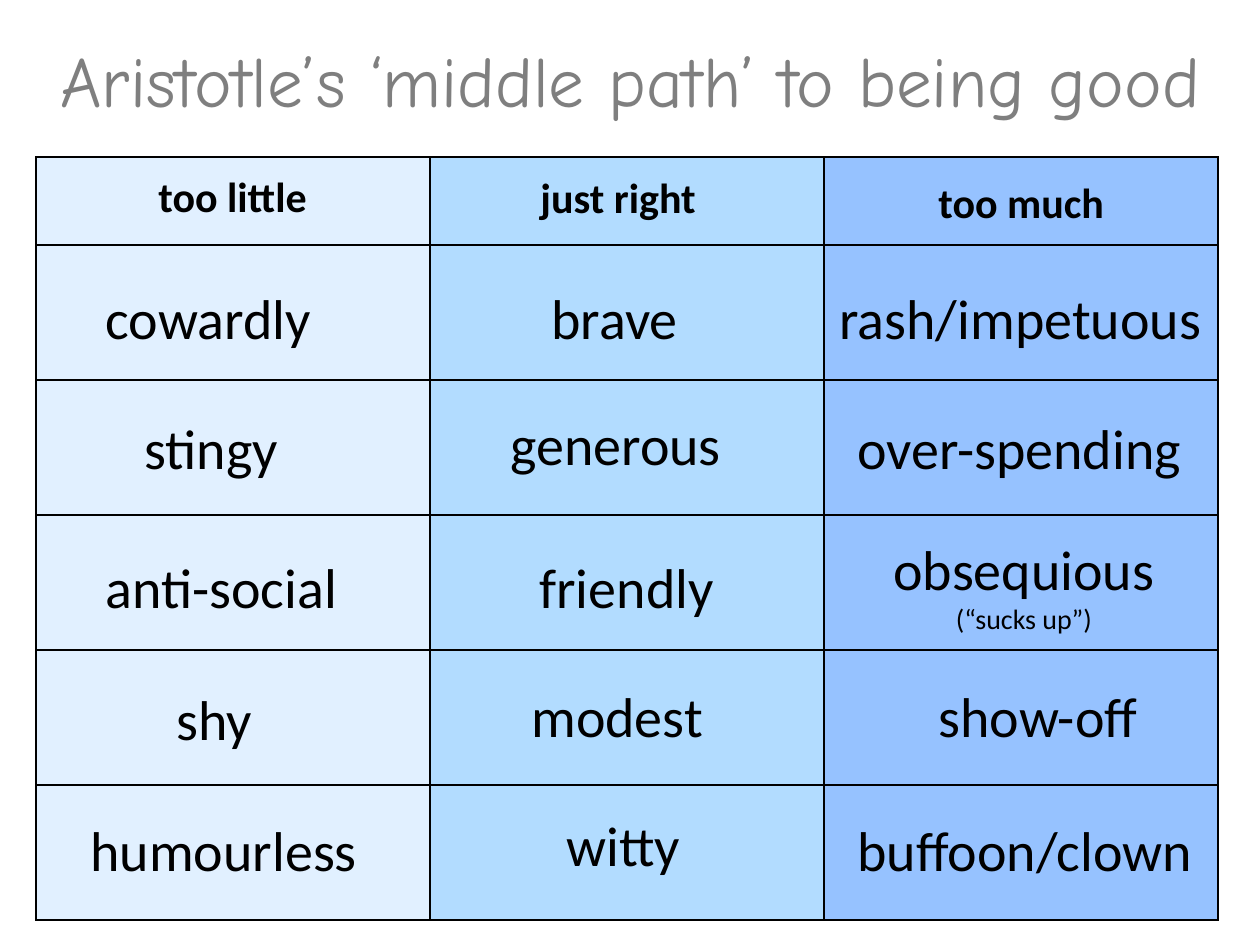
from lxml.etree import SubElement
from pptx import Presentation
from pptx.dml.color import RGBColor
from pptx.enum.text import MSO_ANCHOR, MSO_AUTO_SIZE, PP_ALIGN
from pptx.oxml.ns import qn
from pptx.util import Emu, Pt


def px(length):
    return Emu(round(length * 914400 / 126))


def style(paragraph, size, color="000000", name="Calibri", bold=False):
    font = paragraph.font
    font.size, font.name, font.bold = Pt(size), name, bold
    font.color.rgb = RGBColor.from_string(color)


deck = Presentation()
deck.slide_width, deck.slide_height = px(1260), px(945)
page = deck.slides.add_slide(deck.slide_layouts[6])

# Coloured grid: one header row and five rows of virtues
column_fills = ["E1F0FF", "B2DCFF", "96C2FF"]
row_heights = [88] + [135] * 5
grid = page.shapes.add_table(
    len(row_heights), len(column_fills), px(36), px(157), px(1182), px(sum(row_heights))
).table
for column in grid.columns:
    column.width = px(394)
for row, height in zip(grid.rows, row_heights):
    row.height = px(height)
    for cell, fill in zip(row.cells, column_fills):
        properties = cell._tc.get_or_add_tcPr()
        for side in ("a:lnL", "a:lnR", "a:lnT", "a:lnB"):
            border = SubElement(properties, qn(side), w=str(Pt(1)))
            solid = SubElement(border, qn("a:solidFill"))
            SubElement(solid, qn("a:srgbClr"), val="000000")
        cell.fill.solid()
        cell.fill.fore_color.rgb = RGBColor.from_string(fill)

# Title
title = page.shapes.add_textbox(0, 0, px(1260), px(157)).text_frame
title.word_wrap = True
title.vertical_anchor = MSO_ANCHOR.MIDDLE
heading = title.paragraphs[0]
heading.text = "Aristotle’s ‘middle path’ to being good"
heading.alignment = PP_ALIGN.CENTER
style(heading, 40.7, "7F7F7F", "Comic Neue")

# Words over the grid: text, left, top, width
headers = [
    ("too little", 146, 164, 175),
    ("just right", 528, 165, 183),
    ("too much", 926, 170, 193),
]
words = [
    ("cowardly", 93, 277, 234),
    ("brave", 539, 277, 156),
    ("rash/impetuous", 827, 277, 392),
    ("stingy", 132, 407, 161),
    ("generous", 498, 403, 239),
    ("over-spending", 845, 407, 354),
    ("anti-social", 93, 546, 260),
    ("friendly", 527, 546, 202),
    ("obsequious\n(“sucks up”)", 879, 528, 290),
    ("shy", 164, 678, 103),
    ("modest", 519, 675, 199),
    ("show-off", 926, 675, 228),
    ("humourless", 78, 809, 295),
    ("witty", 554, 804, 140),
    ("buffoon/clown", 845, 809, 365),
]
for entries, size, height, bold in ((headers, 24, 63, True), (words, 32, 81, False)):
    for text, left, top, width in entries:
        lines = text.split("\n")
        box_height = height + 34 * (len(lines) - 1)
        frame = page.shapes.add_textbox(px(left), px(top), px(width), px(box_height)).text_frame
        frame.word_wrap = False
        frame.auto_size = MSO_AUTO_SIZE.SHAPE_TO_FIT_TEXT
        frame.text = text
        for index, para in enumerate(frame.paragraphs):
            style(para, 16 if index else size, bold=bold)
            if len(lines) > 1:
                para.alignment = PP_ALIGN.CENTER

deck.save("out.pptx")
